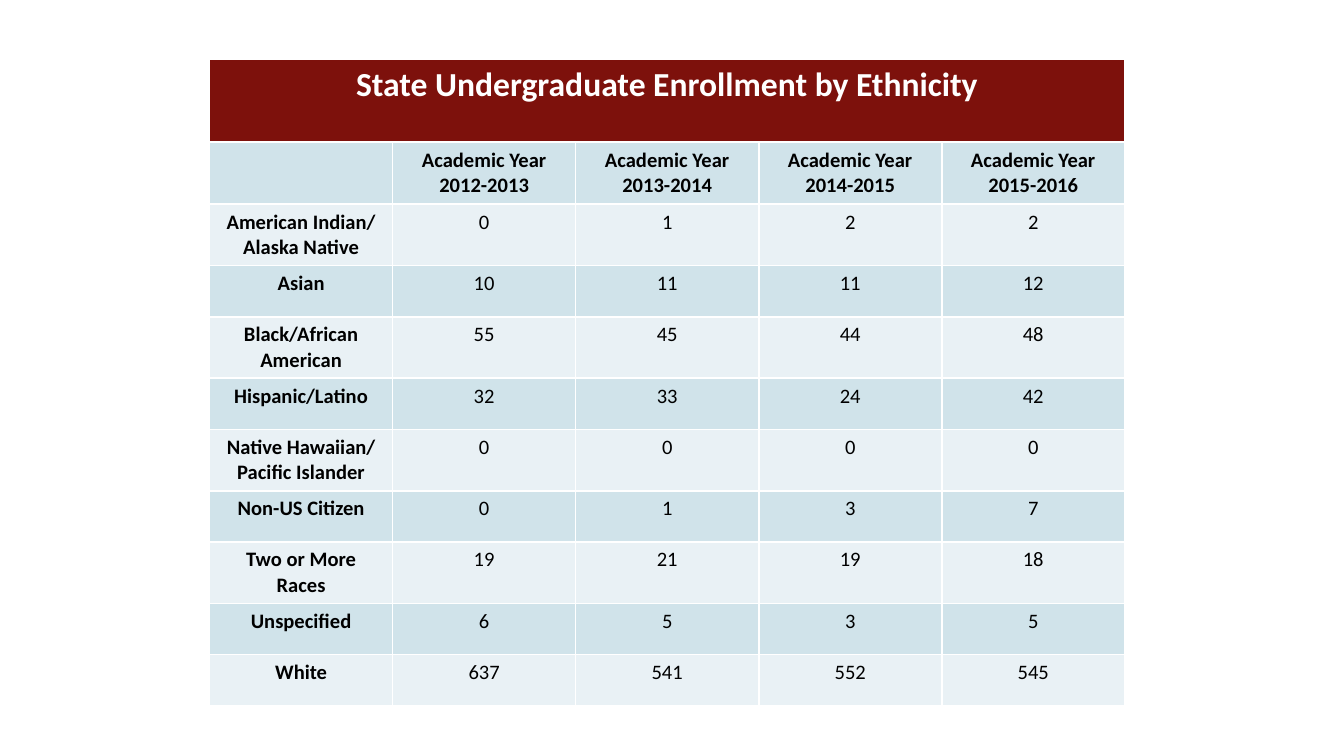
from dataclasses import dataclass

from lxml import etree
from pptx import Presentation
from pptx.dml.color import RGBColor
from pptx.enum.text import PP_ALIGN
from pptx.oxml.ns import qn
from pptx.util import Inches, Pt

CENTER = PP_ALIGN.CENTER
WIDE = 10
HIGH = WIDE * 9 / 16
BOX = (1.56, 0.44, 6.81, 4.69)
ROWS = [0.6, 0.45] + [0.43, 0.37] * 3 + [0.37] * 3

TITLE = "State Undergraduate Enrollment by Ethnicity"
YEARS = [
    "",
    "Academic Year 2012-2013",
    "Academic Year\n2013-2014",
    "Academic Year 2014-2015",
    "Academic Year\n2015-2016",
]
GROUPS = [
    ("American Indian/ Alaska Native", 0, 1, 2, 2),
    ("Asian", 10, 11, 11, 12),
    ("Black/African American", 55, 45, 44, 48),
    ("Hispanic/Latino", 32, 33, 24, 42),
    ("Native Hawaiian/ Pacific Islander", 0, 0, 0, 0),
    ("Non-US Citizen", 0, 1, 3, 7),
    ("Two or More Races", 19, 21, 19, 18),
    ("Unspecified", 6, 5, 3, 5),
    ("White", 637, 541, 552, 545),
]


@dataclass(frozen=True)
class Theme:
    """Colours, font and type sizes."""

    font: str = "Calibri"
    head: str = "7D110C"
    bands: tuple = ("E9F1F5", "D0E3EA")
    ink: str = "000000"
    rule: str = "FFFFFF"
    big: int = 18
    small: int = 11


THEME = Theme()


def edge(cell):
    """Rule all four sides of a cell."""
    props = cell._tc.get_or_add_tcPr()
    for side in "LRTB":
        line = etree.SubElement(props, qn(f"a:ln{side}"), w=str(Pt(1)))
        fill = etree.SubElement(line, qn("a:solidFill"))
        etree.SubElement(fill, qn("a:srgbClr"), val=THEME.rule)


def style(cell, text, fill, size, ink, bold):
    """Fill one cell with centred text, colour and rules."""
    edge(cell)
    cell.fill.solid()
    cell.fill.fore_color.rgb = RGBColor.from_string(fill)
    cell.margin_left = cell.margin_right = Inches(0.08)
    cell.margin_top = cell.margin_bottom = Inches(0.04)
    cell.text_frame.text = text
    for para in cell.text_frame.paragraphs:
        para.alignment = CENTER
        para.font.name = THEME.font
        para.font.size = Pt(size)
        para.font.bold = bold
        para.font.color.rgb = RGBColor.from_string(ink)


def enrollment(slide, box):
    """Place the enrollment table in the given box."""
    body = [YEARS, *GROUPS]
    count = len(YEARS)
    place = [Inches(n) for n in box]
    table = slide.shapes.add_table(len(body) + 1, count, *place).table
    table.first_row = table.horz_banding = False
    for col in table.columns:
        col.width = Inches(box[2] / count)
    for row, share in zip(table.rows, ROWS):
        row.height = Inches(box[3] * share / sum(ROWS))

    for col in range(count):
        text = "" if col else TITLE
        style(table.cell(0, col), text, THEME.head, THEME.big, THEME.rule, True)
    table.cell(0, 0).merge(table.cell(0, count - 1))

    for r, line in enumerate(body, 1):
        for c, value in enumerate(line):
            bold = r == 1 or c == 0
            fill = THEME.bands[r % 2]
            style(table.cell(r, c), str(value), fill, THEME.small, THEME.ink, bold)


def main():
    """Build and save the slide."""
    deck = Presentation()
    deck.slide_width, deck.slide_height = Inches(WIDE), Inches(HIGH)
    slide = deck.slides.add_slide(deck.slide_layouts[6])
    enrollment(slide, BOX)
    deck.save("out.pptx")


if __name__ == "__main__":
    main()
